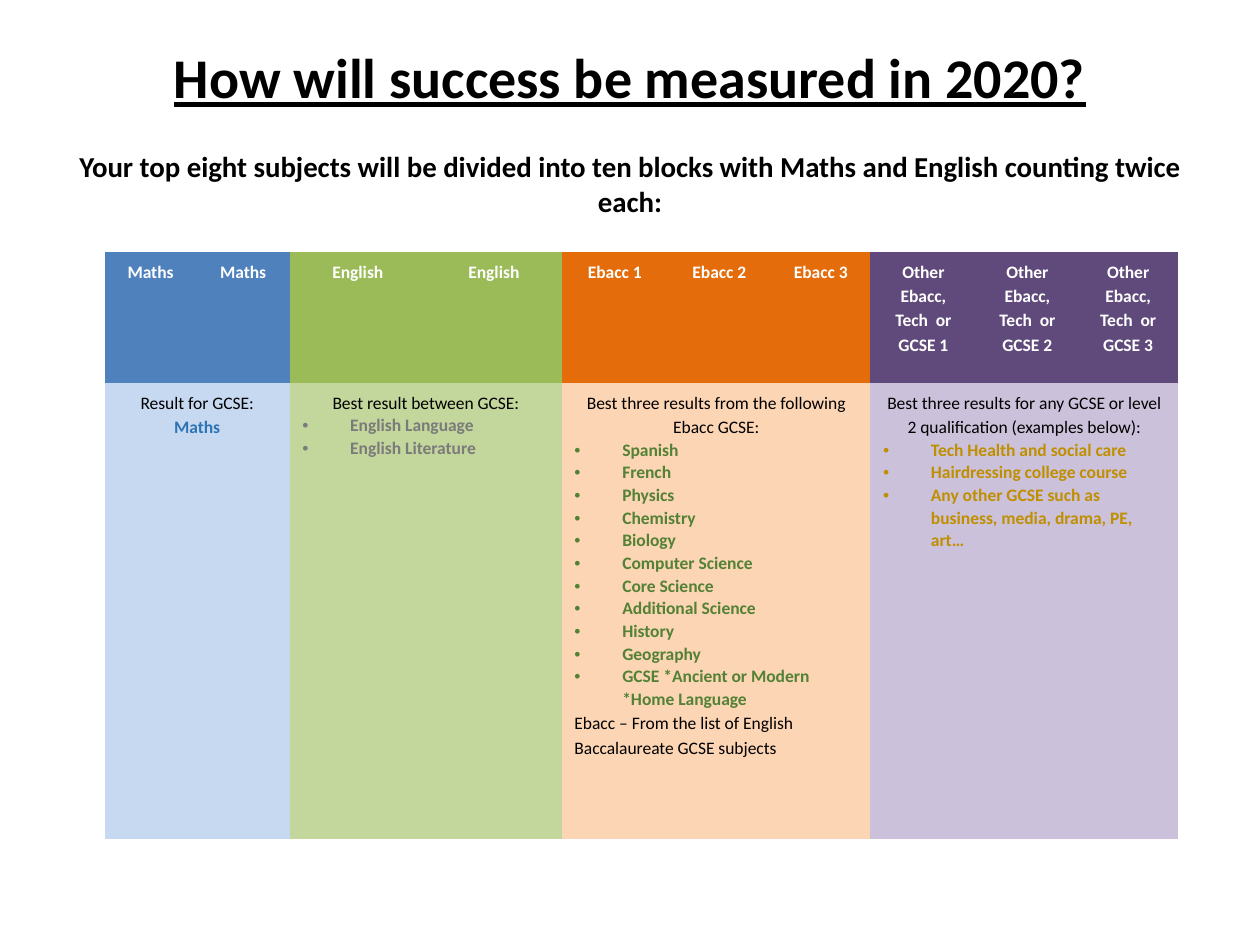
from lxml.etree import SubElement
from pptx import Presentation
from pptx.dml.color import RGBColor
from pptx.enum.text import MSO_ANCHOR, PP_ALIGN
from pptx.oxml.ns import qn
from pptx.util import Inches, Pt

BLACK = RGBColor(0x00, 0x00, 0x00)
WHITE = RGBColor(0xFF, 0xFF, 0xFF)
BLUE, PALE_BLUE = RGBColor(0x4F, 0x81, 0xBD), RGBColor(0xC6, 0xD9, 0xF1)
GREEN, PALE_GREEN = RGBColor(0x9B, 0xBB, 0x59), RGBColor(0xC3, 0xD6, 0x9B)
ORANGE, PALE_ORANGE = RGBColor(0xE4, 0x6C, 0x0A), RGBColor(0xFC, 0xD5, 0xB5)
PURPLE, PALE_PURPLE = RGBColor(0x60, 0x4A, 0x7B), RGBColor(0xCC, 0xC1, 0xDA)
MATHS_TEXT = RGBColor(0x2E, 0x74, 0xB5)
ENGLISH_TEXT = RGBColor(0x7B, 0x7B, 0x7B)
EBACC_TEXT = RGBColor(0x53, 0x81, 0x35)
OTHER_TEXT = RGBColor(0xBF, 0x8F, 0x00)

TITLE = "How will success be measured in 2020?"
INTRO = ("Your top eight subjects will be divided into ten blocks "
         "with Maths and English counting twice each:")

# Each block spans as many columns as it has headings.
BLOCKS = [
    {"headings": ["Maths", "Maths"], "widths": [0.73, 0.74],
     "fills": (BLUE, PALE_BLUE), "color": MATHS_TEXT,
     "rule": "Result for GCSE:", "result": "Maths"},
    {"headings": ["English", "English"], "widths": [1.08, 1.08],
     "fills": (GREEN, PALE_GREEN), "color": ENGLISH_TEXT,
     "rule": "Best result between GCSE:",
     "subjects": ["English Language", "English Literature"]},
    {"headings": [f"Ebacc {n}" for n in (1, 2, 3)], "widths": [0.84, 0.82, 0.79],
     "fills": (ORANGE, PALE_ORANGE), "color": EBACC_TEXT,
     "rule": "Best three results from the following Ebacc GCSE:",
     "subjects": ["Spanish", "French", "Physics", "Chemistry", "Biology",
                  "Computer Science", "Core Science", "Additional Science",
                  "History", "Geography",
                  "GCSE *Ancient or Modern *Home Language"],
     "note": "Ebacc – From the list of English Baccalaureate GCSE subjects"},
    {"headings": [f"Other Ebacc, Tech  or GCSE {n}" for n in (1, 2, 3)],
     "widths": [0.84, 0.81, 0.79],
     "fills": (PURPLE, PALE_PURPLE), "color": OTHER_TEXT,
     "rule": "Best three results for any GCSE or level 2 qualification "
             "(examples below):",
     "subjects": ["Tech Health and social care", "Hairdressing college course",
                  "Any other GCSE such as business, media, drama, PE, art…"]},
]
ROW_HEIGHTS = [1.04, 3.62]
TABLE_LEFT, TABLE_TOP = 0.83, 2
BULLET_INDENT = Inches(0.38)


def write(frame, text, size=10, color=BLACK, bold=False, underline=False,
          align=PP_ALIGN.CENTER, spacing=1.15, bullet=False):
    """Fill the frame's empty first paragraph, or else append a paragraph."""
    paragraph = frame.paragraphs[0] if not frame.text else frame.add_paragraph()
    paragraph.alignment = align
    paragraph.line_spacing = spacing
    run = paragraph.add_run()
    run.text = text
    font = run.font
    font.name, font.size = "Calibri", Pt(size)
    font.bold, font.underline = bold, underline
    font.color.rgb = color
    if bullet:
        properties = paragraph._p.get_or_add_pPr()
        properties.set("marL", str(BULLET_INDENT))
        properties.set("indent", str(-BULLET_INDENT))
        SubElement(properties, qn("a:buFont")).set("typeface", "Arial")
        SubElement(properties, qn("a:buChar")).set("char", "•")


def add_heading(slide, top, text, **text_format):
    box = slide.shapes.add_textbox(Inches(0.5), Inches(top), Inches(9), Inches(0.61))
    frame = box.text_frame
    frame.word_wrap = True
    frame.vertical_anchor = MSO_ANCHOR.MIDDLE
    write(frame, text, bold=True, spacing=1.0, **text_format)


def fill_cell(cell, color):
    cell.fill.solid()
    cell.fill.fore_color.rgb = color


def write_results(frame, block):
    write(frame, block["rule"])
    if "result" in block:
        write(frame, block["result"], color=block["color"], bold=True)
    for subject in block.get("subjects", []):
        write(frame, subject, color=block["color"], bold=True,
              align=PP_ALIGN.LEFT, spacing=1.07, bullet=True)
    if "note" in block:
        write(frame, block["note"], align=PP_ALIGN.LEFT)


def add_blocks_table(slide):
    widths = [width for block in BLOCKS for width in block["widths"]]
    table = slide.shapes.add_table(
        len(ROW_HEIGHTS), len(widths), Inches(TABLE_LEFT), Inches(TABLE_TOP),
        Inches(sum(widths)), Inches(sum(ROW_HEIGHTS))).table
    table.first_row = table.horz_banding = False
    # "No Style, No Grid" keeps the table free of borders.
    table._tbl.tblPr.find(qn("a:tableStyleId")).text = (
        "{2D5ABB26-0587-4C30-8999-92F81FD0307C}")
    for column, width in zip(table.columns, widths):
        column.width = Inches(width)
    for row, height in zip(table.rows, ROW_HEIGHTS):
        row.height = Inches(height)

    first = 0
    for block in BLOCKS:
        heading_fill, result_fill = block["fills"]
        last = first + len(block["headings"]) - 1
        for column, heading in enumerate(block["headings"], first):
            cell = table.cell(0, column)
            fill_cell(cell, heading_fill)
            write(cell.text_frame, heading, color=WHITE, bold=True)
        results = table.cell(1, first)
        results.merge(table.cell(1, last))
        fill_cell(results, result_fill)
        write_results(results.text_frame, block)
        first = last + 1


def main():
    deck = Presentation()
    deck.slide_width, deck.slide_height = Inches(10), Inches(7.5)
    slide = deck.slides.add_slide(deck.slide_layouts[6])
    add_heading(slide, 0.3, TITLE, size=32, underline=True)
    add_heading(slide, 1.15, INTRO, size=16.5)
    add_blocks_table(slide)
    deck.save("out.pptx")


if __name__ == "__main__":
    main()
